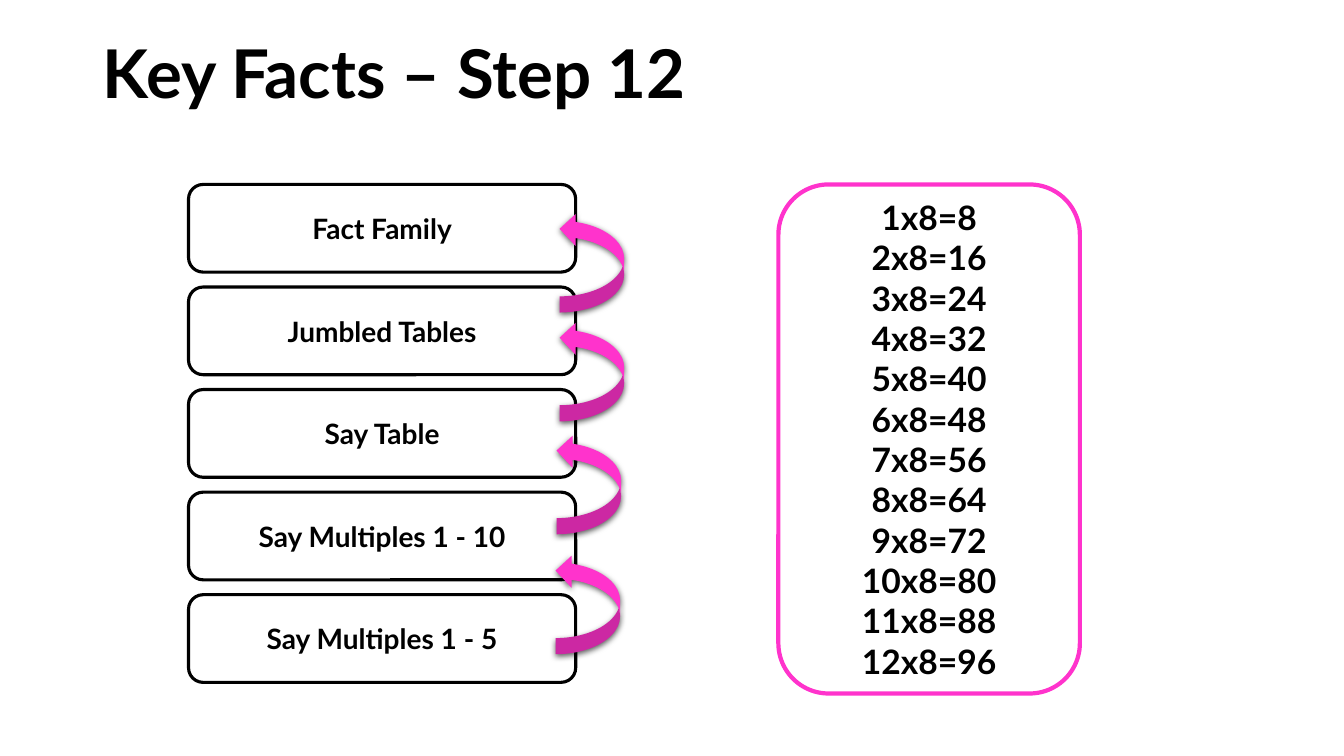
from lxml.etree import SubElement
from pptx import Presentation
from pptx.dml.color import RGBColor
from pptx.enum.shapes import MSO_SHAPE
from pptx.enum.text import MSO_ANCHOR, PP_ALIGN
from pptx.oxml.ns import qn
from pptx.util import Inches, Pt

BLACK = RGBColor(0x00, 0x00, 0x00)
WHITE = RGBColor(0xFF, 0xFF, 0xFF)
PINK = RGBColor(0xFF, 0x33, 0xCC)

STEPS = ["Fact Family", "Jumbled Tables", "Say Table",
         "Say Multiples 1 - 10", "Say Multiples 1 - 5"]
ARROW_OFFSETS = [(3.68, 0.28), (3.68, 1.36), (3.65, 2.48), (3.64, 3.67)]


def write(frame, lines, size, align, spacing=None):
    frame.word_wrap = True
    frame.vertical_anchor = MSO_ANCHOR.MIDDLE
    font_format = {"name": "Lato", "size": Pt(size), "bold": True}
    for index, line in enumerate(lines):
        paragraph = frame.add_paragraph() if index else frame.paragraphs[0]
        paragraph.alignment = align
        paragraph.line_spacing = spacing
        run = paragraph.add_run()
        run.text = line
        for attribute, value in font_format.items():
            setattr(run.font, attribute, value)
        run.font.color.rgb = BLACK


def add_title(slide, left, top, width, height):
    title = slide.shapes.add_textbox(*map(Inches, (left, top, width, height)))
    write(title.text_frame, ["Key Facts – Step 12"], 48, PP_ALIGN.LEFT, 0.9)


def add_card(slide, box, lines, size, outline, weight):
    card = slide.shapes.add_shape(MSO_SHAPE.ROUNDED_RECTANGLE, *map(Inches, box))
    card.shadow.inherit = False
    card.fill.solid()
    card.fill.fore_color.rgb = WHITE
    card.line.color.rgb = outline
    card.line.width = Pt(weight)
    write(card.text_frame, lines, size, PP_ALIGN.CENTER)


def add_climb_arrow(slide, left, top):
    arrow = slide.shapes.add_shape(
        MSO_SHAPE.CURVED_RIGHT_ARROW, *map(Inches, (left, top, 0.64, 0.99)))
    arrow.rotation = 180
    arrow.fill.solid()
    arrow.fill.fore_color.rgb = PINK
    arrow.line.fill.background()
    arrow.shadow.inherit = False
    effects = arrow.element.spPr.find(qn("a:effectLst"))
    shadow = SubElement(effects, qn("a:outerShdw"), blurRad=str(Pt(4.5)),
                        dist=str(Pt(1.5)), dir="5400000", rotWithShape="0")
    tint = SubElement(shadow, qn("a:srgbClr"), val=str(BLACK))
    SubElement(tint, qn("a:alpha"), val="63000")


def add_ladder(slide, left, top, width, height):
    step_height = 0.87
    pitch = (height - step_height) / (len(STEPS) - 1)
    for index, step in enumerate(STEPS):
        box = (left, top + index * pitch, width, step_height)
        add_card(slide, box, [step], 20, BLACK, 2.25)
    for across, down in ARROW_OFFSETS:
        add_climb_arrow(slide, left + across, top + down)


def add_times_table(slide, left, top, width, height):
    facts = [f"{factor}x8={factor * 8}" for factor in range(1, 13)]
    add_card(slide, (left, top, width, height), facts, 24, PINK, 3)


def main():
    deck = Presentation()
    deck.slide_width, deck.slide_height = Inches(13.33), Inches(7.5)
    slide = deck.slides.add_slide(deck.slide_layouts[6])
    add_title(slide, 0.92, 0.04, 11.5, 1.45)
    add_ladder(slide, 1.87, 1.83, 3.84, 4.94)
    add_times_table(slide, 7.72, 1.83, 2.99, 5.05)
    deck.save("out.pptx")


if __name__ == "__main__":
    main()
